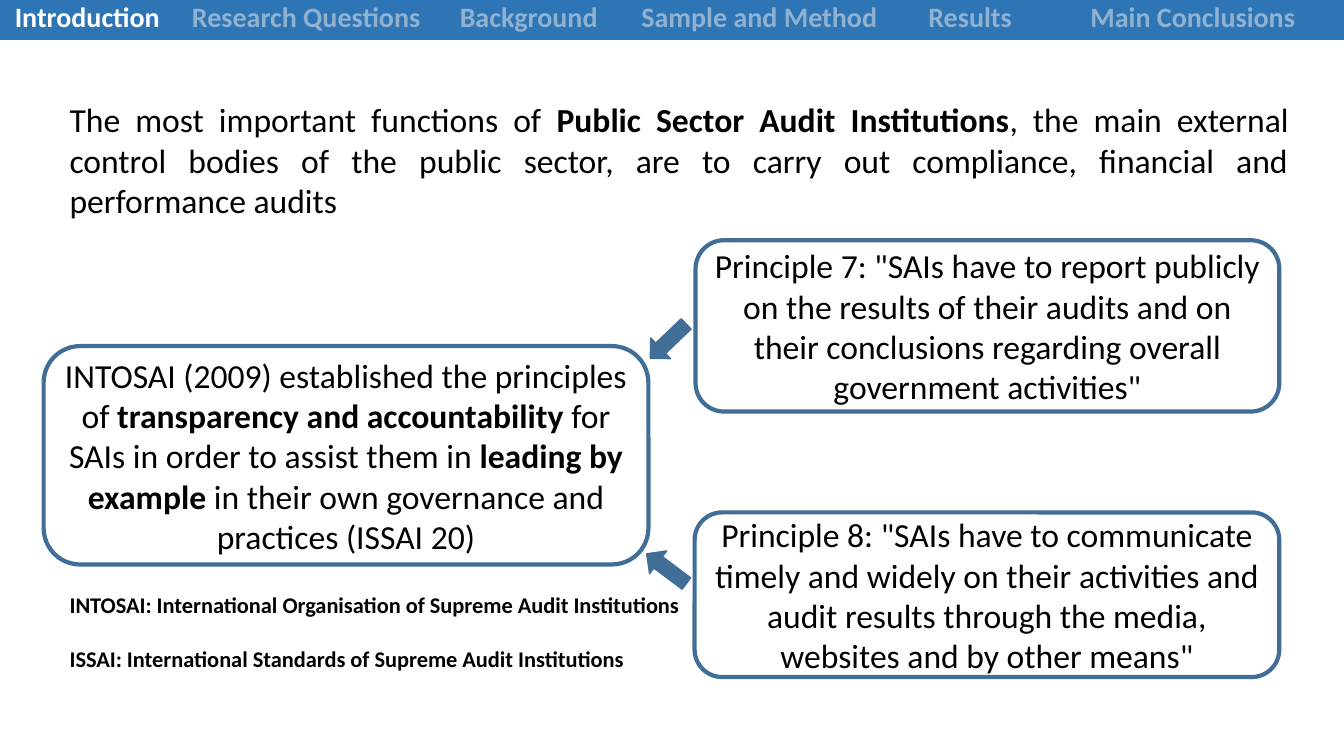
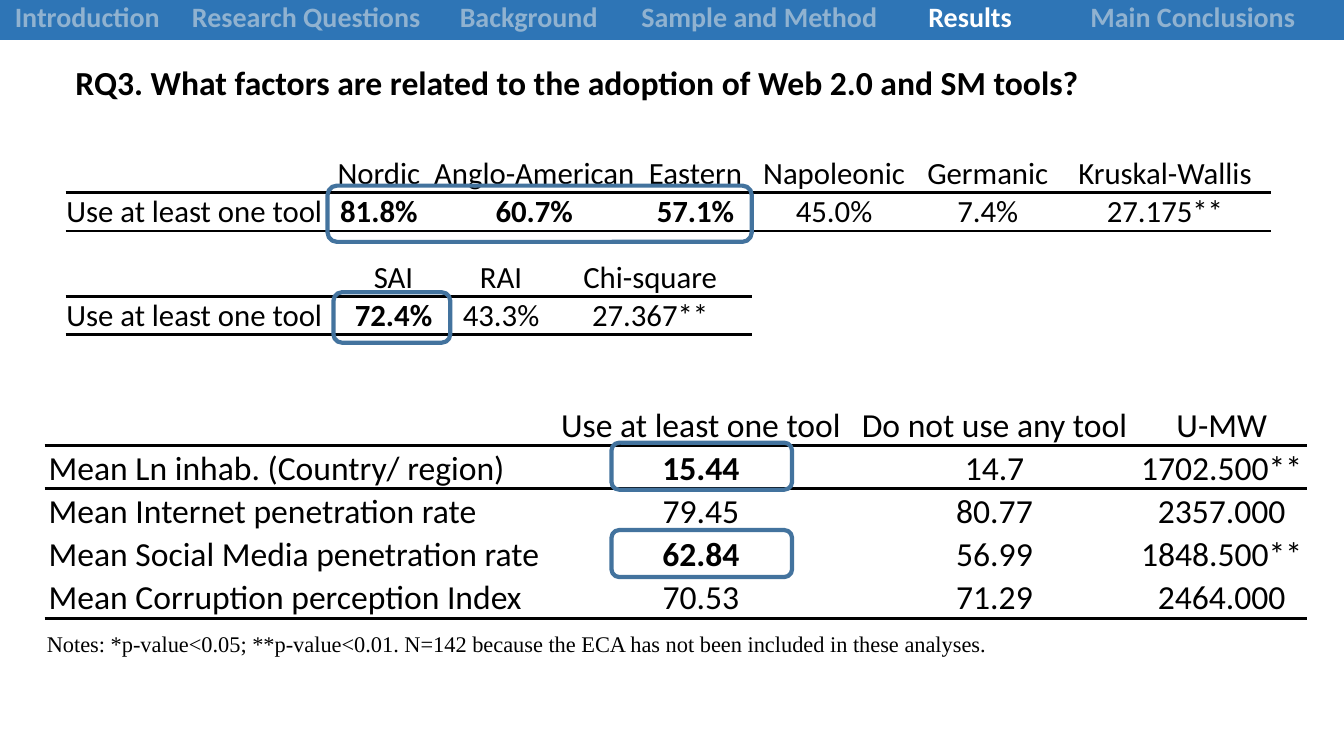
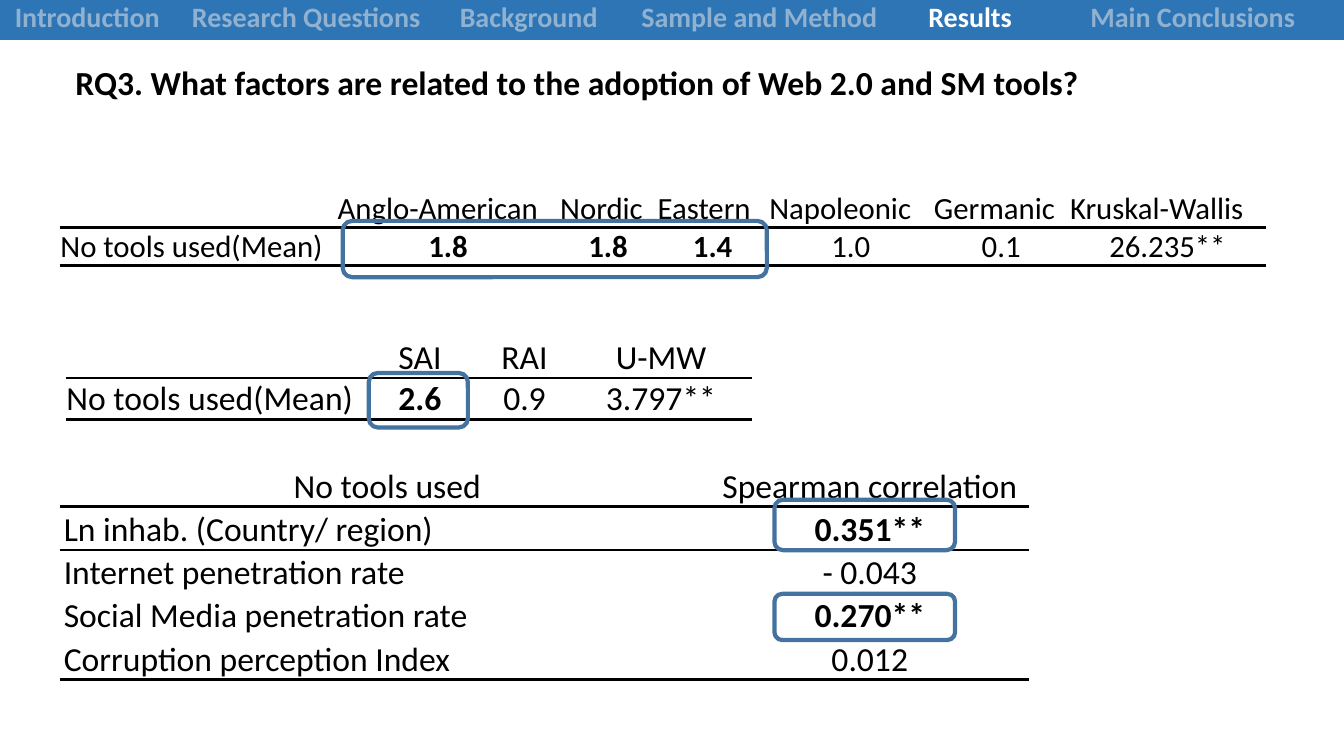
from lxml.etree import SubElement
from pptx import Presentation
from pptx.dml.color import RGBColor
from pptx.enum.shapes import MSO_SHAPE
from pptx.enum.text import MSO_ANCHOR, PP_ALIGN
from pptx.oxml.ns import qn
from pptx.util import Inches, Pt

COLORS = {
    "text": "000000",
    "white": "FFFFFF",
    "band": "2E75B6",
    "faded": "90B2D0",
    "box": "406E97",
    "highlight": "43739E",
}
GRID_COLUMNS, GRID_ROWS = 160, 90
PLAIN_TABLE_STYLE = "{2D5ABB26-0587-4C30-8999-92F81FD0307C}"
SECTIONS = {
    "Introduction": 20.8,
    "Research Questions": 31.3,
    "Background": 21.7,
    "Sample and Method": 33.2,
    "Results": 17,
    "Main Conclusions": 36,
}
QUESTION = "RQ3. What factors are related to the adoption of Web 2.0 and SM tools?"


def rgb(name):
    return RGBColor.from_string(COLORS[name])


def write(frame, *paragraphs, size=24, font="Calibri", color="text", bold=False,
          align=PP_ALIGN.LEFT, spacing=None, gap=0):
    """Each paragraph is a string or a list of runs whose every second run is bold."""
    frame.word_wrap = True
    for index, content in enumerate(paragraphs):
        paragraph = frame.add_paragraph() if index else frame.paragraphs[0]
        paragraph.alignment = align
        if spacing:
            paragraph.line_spacing = spacing
        if index:
            paragraph.space_before = Pt(gap)
        runs = [content] if isinstance(content, str) else content
        for position, words in enumerate(runs):
            run = paragraph.add_run()
            run.text = words
            run.font.size = Pt(size)
            run.font.name = font
            run.font.bold = bold or position % 2 == 1
            run.font.color.rgb = rgb(color)


class Deck:
    def __init__(self):
        self.presentation = Presentation()
        self.presentation.slide_width = Inches(13.33)
        self.presentation.slide_height = Inches(7.5)
        self.column = self.presentation.slide_width / GRID_COLUMNS
        self.row = self.presentation.slide_height / GRID_ROWS
        self.slide = None

    def place(self, left, top, width, height):
        return (round(left * self.column), round(top * self.row),
                round(width * self.column), round(height * self.row))

    def start(self, section):
        self.slide = self.presentation.slides.add_slide(self.presentation.slide_layouts[6])
        band = self.grid(0, -0.5, SECTIONS.values(), [5.2])
        for cell, name in zip(band.rows[0].cells, SECTIONS):
            cell.fill.solid()
            cell.fill.fore_color.rgb = rgb("band")
            write(cell.text_frame, name, size=20, bold=True, align=PP_ALIGN.CENTER,
                  color="white" if name == section else "faded")

    def text(self, area, *paragraphs, top_inset=0.6, **style):
        frame = self.slide.shapes.add_textbox(*self.place(*area)).text_frame
        frame.margin_top = round(top_inset * self.row)
        write(frame, *paragraphs, **style)

    def question(self):
        self.text((7.8, 7.4, 145.4, 5.4), QUESTION, top_inset=0, bold=True)

    def outline(self, area, preset=MSO_SHAPE.ROUNDED_RECTANGLE, fill=None,
                line="highlight", weight=3):
        shape = self.slide.shapes.add_shape(preset, *self.place(*area))
        shape.shadow.inherit = False
        if fill:
            shape.fill.solid()
            shape.fill.fore_color.rgb = rgb(fill)
        else:
            shape.fill.background()
        shape.line.color.rgb = rgb(line)
        shape.line.width = Pt(weight)
        return shape

    def box(self, area, content, fill=None):
        frame = self.outline(area, fill=fill, line="box").text_frame
        frame.vertical_anchor = MSO_ANCHOR.MIDDLE
        write(frame, content, align=PP_ALIGN.CENTER)

    def arrow(self, left, top, angle):
        arrow = self.outline((left, top, 5.9, 3.4), MSO_SHAPE.RIGHT_ARROW,
                             fill="box", line="box", weight=1)
        arrow.rotation = angle

    def grid(self, left, top, widths, heights):
        widths = list(widths)
        area = self.place(left, top, sum(widths), sum(heights))
        table = self.slide.shapes.add_table(len(heights), len(widths), *area).table
        table.first_row = table.horz_banding = False
        table._tbl.tblPr.find(qn("a:tableStyleId")).text = PLAIN_TABLE_STYLE
        for column, width in zip(table.columns, widths):
            column.width = round(width * self.column)
        for row, height in zip(table.rows, heights):
            row.height = round(height * self.row)
        return table

    def rule(self, cell, edge):
        properties = cell._tc.get_or_add_tcPr()
        line = SubElement(properties, qn(f"a:{edge}"), w=str(Pt(2.25)))
        fill = SubElement(line, qn("a:solidFill"))
        SubElement(fill, qn("a:srgbClr"), val=COLORS["text"])
        properties.insert(0, line)

    def results(self, left, top, widths, heights, rows, bold=(), inset=0.1, label_inset=0.1,
                head_align=PP_ALIGN.CENTER, **style):
        table = self.grid(left, top, widths, heights)
        for r, values in enumerate(rows):
            for c, value in enumerate(values):
                cell = table.cell(r, c)
                cell.fill.background()
                cell.vertical_anchor = MSO_ANCHOR.BOTTOM
                cell.margin_left = round((inset if c else label_inset) * self.column)
                cell.margin_right = round(inset * self.column)
                cell.margin_top = round(inset * self.row)
                cell.margin_bottom = 0
                if r == len(rows) - 1:
                    self.rule(cell, "lnB")
                if r == 1:
                    self.rule(cell, "lnT")
                if value:
                    align = head_align if r == 0 else PP_ALIGN.CENTER if c else PP_ALIGN.LEFT
                    write(cell.text_frame, value, bold=(r, c) in bold, align=align, **style)

    def factors(self, left, top, widths, rows):
        self.results(left, top, widths, [5.14] * len(rows), rows, bold={(1, 1), (3, 1)},
                     inset=0, label_inset=0.5, spacing=1.07)


def introduction(deck):
    deck.start("Introduction")
    deck.text((7.1, 11.8, 147.5, 15.1),
              ["The most important functions of ", "Public Sector Audit Institutions",
               ", the main external control bodies of the public sector, are to carry out "
               "compliance, financial and performance audits"],
              top_inset=0, align=PP_ALIGN.JUSTIFY)
    deck.box((82.8, 28.6, 69.5, 20.4),
             'Principle 7: "SAIs have to report publicly on the results of their audits and '
             'on their conclusions regarding overall government activities"')
    deck.box((82.7, 61, 69.6, 19.6),
             'Principle 8: "SAIs have to communicate timely and widely on their activities and '
             'audit results through the media, websites and by other means"')
    deck.box((5.2, 41.2, 72, 26),
             ["INTOSAI (2009) established the principles of ", "transparency and accountability ",
              "for SAIs in order to assist them in ", "leading by example",
              " in their own governance and practices (ISSAI 20)"], fill="white")
    deck.arrow(76.6, 38.9, 136.3)
    deck.arrow(76.4, 66, 216.8)
    deck.text((7.1, 69.8, 84.6, 10.9),
              "INTOSAI: International Organisation of Supreme Audit Institutions",
              "ISSAI: International Standards of Supreme Audit Institutions",
              size=16, bold=True, gap=19)


def adoption(deck):
    deck.start("Results")
    deck.question()
    deck.results(7.8, 17.3, [31.3, 12, 25, 13.4, 19.6, 17, 25.2], [5.6, 4.6], [
        ["", "Nordic", "Anglo-American", "Eastern", "Napoleonic", "Germanic", "Kruskal-Wallis"],
        ["Use at least one tool", "81.8%", "60.7%", "57.1%", "45.0%", "7.4%", "27.175**"],
    ], bold={(1, 1), (1, 2), (1, 3)}, size=22)
    deck.results(7.8, 30.8, [31.9, 14.3, 11.3, 24.2], [4.5, 4.5], [
        ["", "SAI", "RAI", "Chi-square"],
        ["Use at least one tool", "72.4%", "43.3%", "27.367**"],
    ], bold={(1, 1)}, size=22)
    deck.factors(5.3, 47.9, [60.1, 36.1, 33.8, 20.3], [
        ["", "Use at least one tool", "Do not use any tool", "U-MW"],
        ["Mean Ln inhab. (Country/ region)", "15.44", "14.7", "1702.500**"],
        ["Mean Internet penetration rate", "79.45", "80.77", "2357.000"],
        ["Mean Social Media penetration rate", "62.84", "56.99", "1848.500**"],
        ["Mean Corruption perception Index", "70.53", "71.29", "2464.000"],
    ])
    for area in [(39, 22.1, 50.5, 6.7), (39.7, 34.8, 13.9, 6),
                 (72.8, 52.7, 21.5, 5.6), (72.8, 63.1, 21.5, 5.6)]:
        deck.outline(area)
    deck.text((4.4, 74.4, 148.8, 4.4),
              "Notes: *p-value<0.05; **p-value<0.01. N=142 because the ECA has not been "
              "included in these analyses.", size=16, font="Times New Roman")


def tool_count(deck):
    deck.start("Results")
    deck.question()
    deck.results(7.1, 22.6, [33, 26.5, 11.6, 13.3, 19.6, 16.2, 23.4], [4.5, 4.5], [
        ["", "Anglo-American", "Nordic", "Eastern", "Napoleonic", "Germanic", "Kruskal-Wallis"],
        ["No tools used(Mean)", "1.8", "1.8", "1.4", "1.0", "0.1", "26.235**"],
    ], bold={(1, 1), (1, 2), (1, 3)}, head_align=PP_ALIGN.LEFT, size=22)
    deck.results(7.8, 40.1, [35.2, 14, 10.9, 21.6], [4.9, 4.9], [
        ["", "SAI", "RAI", "U-MW"],
        ["No tools used(Mean)", "2.6", "0.9", "3.797**"],
    ], bold={(1, 1)})
    deck.factors(7.1, 55.2, [77.5, 37.9], [
        ["No tools used", "Spearman correlation"],
        ["Ln inhab. (Country/ region)", "0.351**"],
        ["Internet penetration rate", "- 0.043"],
        ["Social Media penetration rate", "0.270**"],
        ["Corruption perception Index", "0.012"],
    ])
    for area in [(40.8, 26.3, 50.5, 6.7), (43.9, 44.4, 11.8, 6.5),
                 (92.2, 59.5, 21.5, 6), (92.2, 70.7, 21.5, 5.5)]:
        deck.outline(area)


def main():
    deck = Deck()
    for build in (introduction, adoption, tool_count):
        build(deck)
    deck.presentation.save("out.pptx")


if __name__ == "__main__":
    main()
